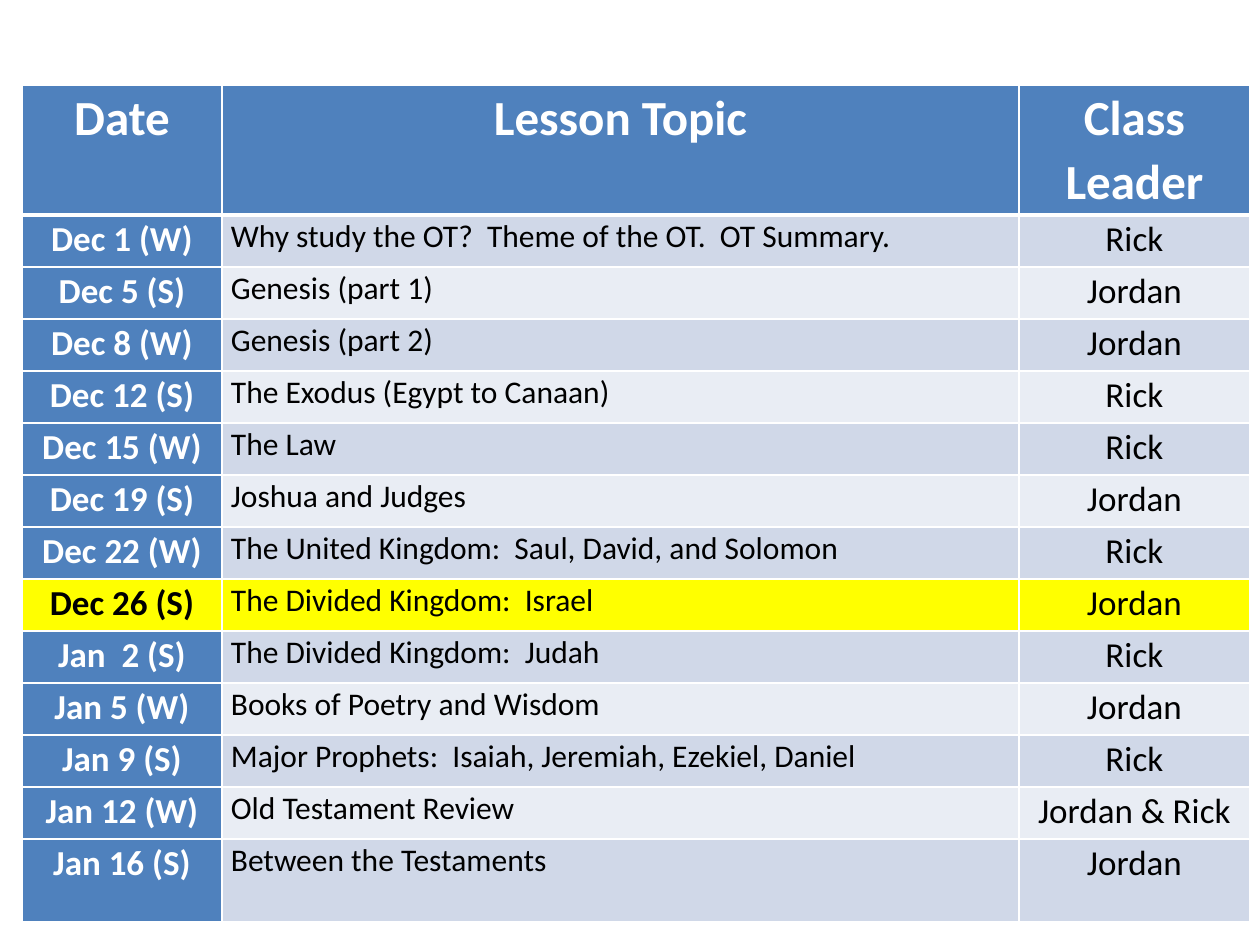
from lxml import etree
from pptx import Presentation
from pptx.dml.color import RGBColor
from pptx.enum.text import PP_ALIGN
from pptx.oxml.ns import qn
from pptx.util import Pt

PX = 914400 / 126
LEFT, CENTER = PP_ALIGN.LEFT, PP_ALIGN.CENTER
WHITE, BLACK, BLUE, YELLOW = "FFFFFF", "000000", "4F81BD", "FFFF00"
BANDS = ["E9EDF4", "D0D8E8"]
TODAY = "Dec 26 (S)"


def px(n):
    return round(n * PX)


def edge(cell, side, width):
    """Draw one white cell border; call before the cell gets its fill."""
    line = etree.SubElement(cell._tc.get_or_add_tcPr(), qn("a:ln" + side), w=str(Pt(width)))
    fill = etree.SubElement(line, qn("a:solidFill"))
    etree.SubElement(fill, qn("a:srgbClr"), val=WHITE)


lessons = [
    ("Date", "Lesson Topic", "Class Leader"),
    ("Dec 1 (W)", "Why study the OT?  Theme of the OT.  OT Summary.", "Rick"),
    ("Dec 5 (S)", "Genesis (part 1)", "Jordan"),
    ("Dec 8 (W)", "Genesis (part 2)", "Jordan"),
    ("Dec 12 (S)", "The Exodus (Egypt to Canaan)", "Rick"),
    ("Dec 15 (W)", "The Law", "Rick"),
    ("Dec 19 (S)", "Joshua and Judges", "Jordan"),
    ("Dec 22 (W)", "The United Kingdom:  Saul, David, and Solomon", "Rick"),
    (TODAY, "The Divided Kingdom:  Israel", "Jordan"),
    ("Jan  2 (S)", "The Divided Kingdom:  Judah", "Rick"),
    ("Jan 5 (W)", "Books of Poetry and Wisdom", "Jordan"),
    ("Jan 9 (S)", "Major Prophets:  Isaiah, Jeremiah, Ezekiel, Daniel", "Rick"),
    ("Jan 12 (W)", "Old Testament Review", "Jordan & Rick"),
    ("Jan 16 (S)", "Between the Testaments", "Jordan"),
]
widths = [200, 797, 231]
heights = [130] + [52] * 12 + [83]

prs = Presentation()
prs.slide_width, prs.slide_height = px(1260), px(945)
slide = prs.slides.add_slide(prs.slide_layouts[6])
table = slide.shapes.add_table(
    len(lessons), len(widths), px(22), px(85), px(sum(widths)), px(sum(heights))
).table
for col, width in zip(table.columns, widths):
    col.width = px(width)

for r, lesson in enumerate(lessons):
    table.rows[r].height = px(heights[r])
    for c, text in enumerate(lesson):
        cell = table.cell(r, c)
        head = r == 0
        bold = head or c == 0
        if lesson[0] == TODAY:
            fill, ink = YELLOW, BLACK
        elif bold:
            fill, ink = BLUE, WHITE
        else:
            fill, ink = BANDS[r % 2], BLACK

        edge(cell, "L", 1)
        edge(cell, "R", 1)
        edge(cell, "T", 3 if r == 1 else 1)
        edge(cell, "B", 3 if head else 1)
        cell.fill.solid()
        cell.fill.fore_color.rgb = RGBColor.from_string(fill)
        cell.margin_left = cell.margin_right = px(9)
        cell.margin_top = cell.margin_bottom = 0

        para = cell.text_frame.paragraphs[0]
        para.alignment = LEFT if c == 1 and not head else CENTER
        para.line_spacing = 1.07
        run = para.add_run()
        run.text = text
        font = run.font
        font.name = "Calibri"
        font.size = Pt(28 if head else 18 if c == 1 else 20)
        font.bold = bold
        font.color.rgb = RGBColor.from_string(ink)

prs.save("out.pptx")
